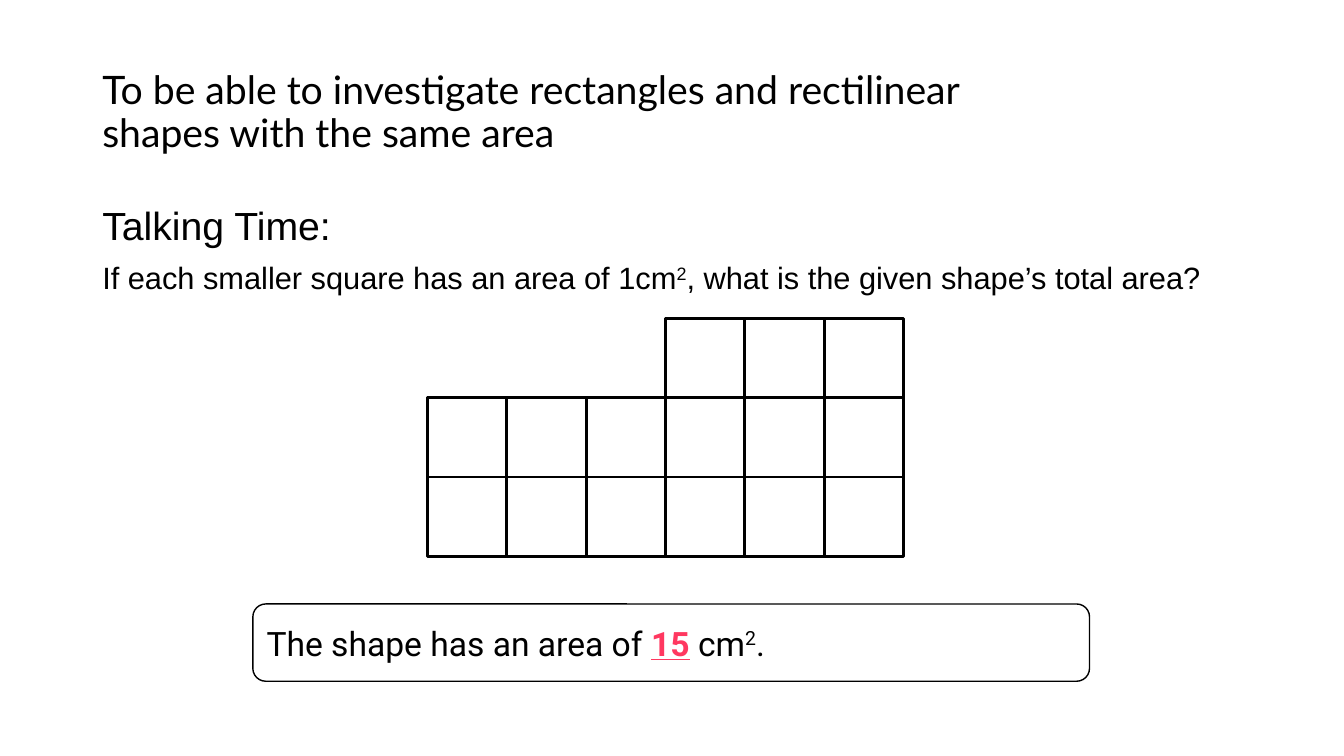
"""Build a lesson slide about the area of a rectilinear shape."""
from dataclasses import dataclass

from pptx import Presentation
from pptx.dml.color import RGBColor
from pptx.enum.shapes import MSO_SHAPE
from pptx.enum.text import MSO_ANCHOR, PP_ALIGN
from pptx.shapes.autoshape import Shape
from pptx.slide import Slide
from pptx.text.text import TextFrame
from pptx.util import Inches, Pt

WIDTH, HEIGHT = 13.33, 7.5
COLUMNS, ROWS = 16, 9
BLACK, WHITE, PINK = "000000", "FFFFFF", "FF3860"
SQUARE = 17 / 18
SHAPE_LEFT, SHAPE_TOP = 5.09, 3.79
SHAPE_ROWS = ("...###", "######", "######")


@dataclass(frozen=True)
class Box:
    """Place on the slide grid, in columns and rows."""
    left: float
    top: float
    width: float
    height: float

    def emu(self) -> tuple[int, int, int, int]:
        """Return left, top, width and height as slide lengths."""
        col, row = Inches(WIDTH) / COLUMNS, Inches(HEIGHT) / ROWS
        return (round(self.left * col), round(self.top * row),
                round(self.width * col), round(self.height * row))


@dataclass(frozen=True)
class Run:
    """Piece of text with one look."""
    text: str
    size: float
    font: str
    color: str = BLACK
    strong: bool = False
    raised: bool = False


@dataclass(frozen=True)
class Para:
    """Paragraph with its spacing."""
    runs: tuple[Run, ...]
    line: float = 0.9
    before: float = 0


def rgb(color: str) -> RGBColor:
    """Turn a hex string into a colour."""
    return RGBColor.from_string(color)


def write(tf: TextFrame, paras: tuple[Para, ...], anchor: MSO_ANCHOR) -> None:
    """Fill a text frame run by run."""
    tf.word_wrap = True
    tf.vertical_anchor = anchor
    for i, para in enumerate(paras):
        p = tf.add_paragraph() if i else tf.paragraphs[0]
        p.alignment = PP_ALIGN.LEFT
        p.line_spacing = para.line
        p.space_before = Pt(para.before)
        for run in para.runs:
            r = p.add_run()
            r.text = run.text
            r.font.name = run.font
            r.font.size = Pt(run.size)
            r.font.color.rgb = rgb(run.color)
            r.font.bold = r.font.underline = run.strong
            if run.raised:
                r._r.get_or_add_rPr().set("baseline", "30000")


def add_text(slide: Slide, box: Box, paras: tuple[Para, ...], anchor: MSO_ANCHOR) -> None:
    """Add a text box."""
    write(slide.shapes.add_textbox(*box.emu()).text_frame, paras, anchor)


def add_outline(slide: Slide, kind: MSO_SHAPE, box: Box, weight: float) -> Shape:
    """Add a white shape with a black outline."""
    sp = slide.shapes.add_shape(kind, *box.emu())
    sp.shadow.inherit = False
    sp.fill.solid()
    sp.fill.fore_color.rgb = rgb(WHITE)
    sp.line.color.rgb = rgb(BLACK)
    sp.line.width = Pt(weight)
    return sp


def add_squares(slide: Slide) -> None:
    """Draw the unit squares of the rectilinear shape."""
    for row, marks in enumerate(SHAPE_ROWS):
        for col, mark in enumerate(marks):
            if mark == "#":
                box = Box(SHAPE_LEFT + col * SQUARE, SHAPE_TOP + row * SQUARE, SQUARE, SQUARE)
                add_outline(slide, MSO_SHAPE.RECTANGLE, box, 2)


def main() -> None:
    """Build and save the slide."""
    prs = Presentation()
    prs.slide_width, prs.slide_height = Inches(WIDTH), Inches(HEIGHT)
    slide = prs.slides.add_slide(prs.slide_layouts[6])

    title = "To be able to investigate rectangles and rectilinear shapes with the same area"
    add_text(slide, Box(1.1, 0.48, 11.52, 1.74),
             (Para((Run(title, 28, "Lato"),)),), MSO_ANCHOR.MIDDLE)

    question = (
        Run("If each smaller square has an area of 1cm", 22, "Arial"),
        Run("2", 22, "Arial", raised=True),
        Run(", what is the given shape’s total area?", 22, "Arial"),
    )
    add_text(slide, Box(1.1, 2.4, 14.45, 5.71),
             (Para((Run("Talking Time:", 28, "Arial"),)), Para(question, before=10)),
             MSO_ANCHOR.TOP)

    answer = (
        Run("The shape has an area of ", 24, "Roboto"),
        Run("15", 24, "Roboto", PINK, strong=True),
        Run(" cm", 24, "Roboto"),
        Run("2", 24, "Roboto", raised=True),
        Run(".", 24, "Roboto"),
    )
    sp = add_outline(slide, MSO_SHAPE.ROUNDED_RECTANGLE, Box(3.01, 7.19, 9.96, 0.92), 1)
    write(sp.text_frame, (Para(answer, line=1.0),), MSO_ANCHOR.MIDDLE)

    add_squares(slide)
    prs.save("out.pptx")


if __name__ == "__main__":
    main()
